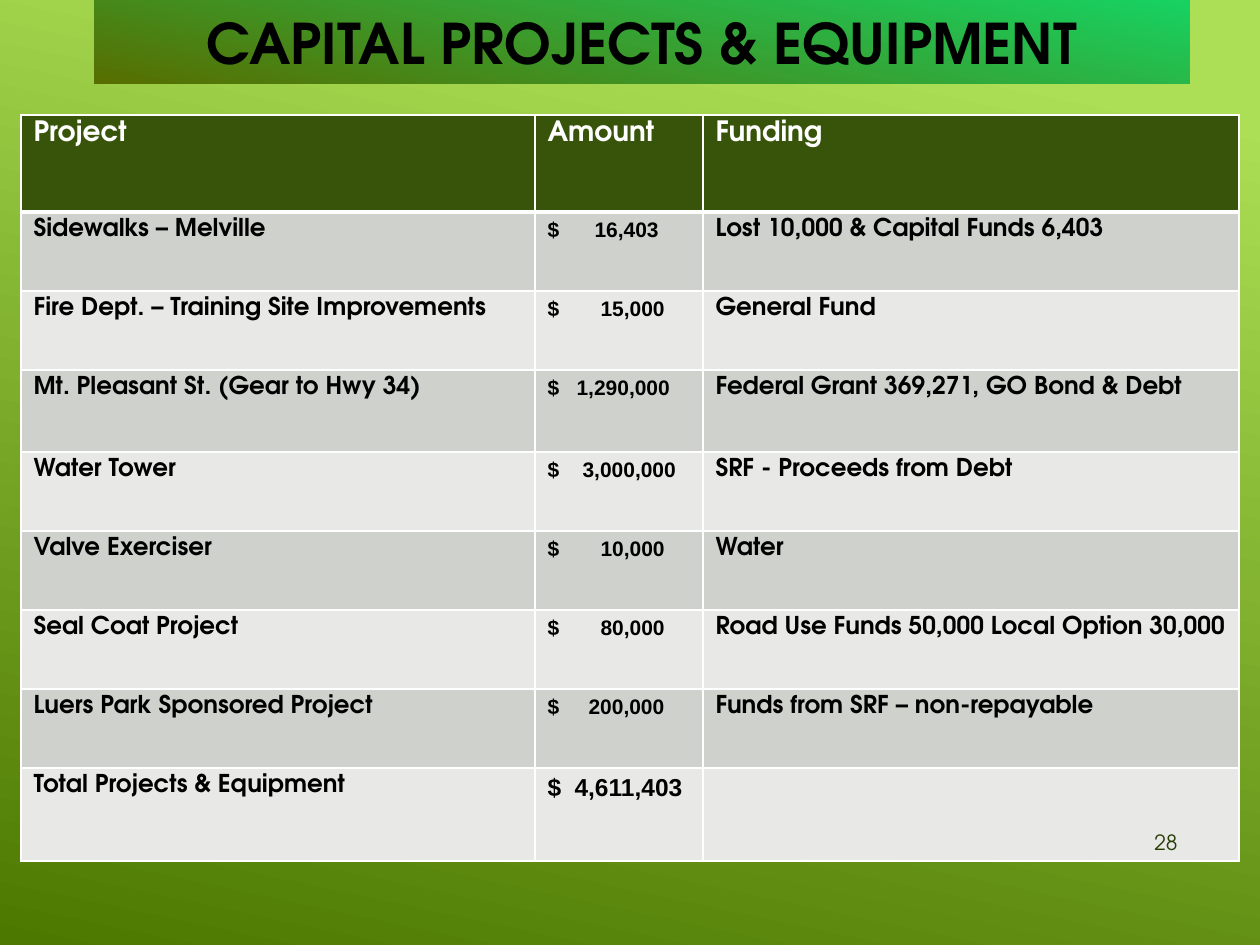
from lxml import etree
from pptx import Presentation
from pptx.dml.color import RGBColor
from pptx.enum.text import MSO_ANCHOR, PP_ALIGN
from pptx.oxml.ns import qn
from pptx.util import Emu, Pt

LEFT, MID, RIGHT, JUST = PP_ALIGN.LEFT, PP_ALIGN.CENTER, PP_ALIGN.RIGHT, PP_ALIGN.JUSTIFY
CENTRE, LOW = MSO_ANCHOR.MIDDLE, MSO_ANCHOR.BOTTOM

TITLE = "CAPITAL PROJECTS & EQUIPMENT"
PAGE = "28"
HEAD = ("Project", "Amount", "Funding")
ROWS = [
    ("Sidewalks – Melville", "16,403", "Lost 10,000 & Capital Funds 6,403"),
    ("Fire Dept. – Training Site Improvements", "15,000", "General Fund"),
    ("Mt. Pleasant St. (Gear to Hwy 34)", "1,290,000", "Federal Grant 369,271, GO Bond & Debt"),
    ("Water Tower", "3,000,000", "SRF - Proceeds from Debt"),
    ("Valve Exerciser", "10,000", "Water"),
    ("Seal Coat Project", "80,000", "Road Use Funds 50,000 Local Option 30,000"),
    ("Luers Park Sponsored Project", "200,000", "Funds from SRF – non-repayable"),
    ("Total Projects & Equipment", "4,611,403", ""),
]
TABS = (47, 53, 29, 35, 53, 53, 41, 27)
WIDTHS = (514, 168, 536)
HEIGHTS = (97, 79, 79, 82, 79, 79, 79, 79, 93)

THEME = {
    "font": "TeX Gyre Adventor", "digits": "Arial",
    "back": ((0.1, "ACDF55"), (1, "4C7800")),
    "band": ((0, "17D262"), (1, "576E00")),
    "head": "38540A", "odd": "CED1CC", "even": "E8E9E7",
    "ink": "000000", "light": "FFFFFF", "page": "293E06",
    "title_pt": 32, "head_pt": 16, "body_pt": 14, "small_pt": 12,
}
SLOPE = 102


def px(n):
    return Emu(round(n * 914400 / 126))


def rgb(name):
    return RGBColor.from_string(THEME[name])


def blend(fill, name):
    fill.gradient()
    fill.gradient_angle = 360 - SLOPE
    for stop, (at, tone) in zip(fill.gradient_stops, THEME[name]):
        stop.position = at
        stop.color.rgb = RGBColor.from_string(tone)


def write(frame, text, size="body_pt", tone="ink", font="font", bold=True,
          align=LEFT, tab=None):
    para = frame.paragraphs[0]
    para.alignment = align
    if tab:
        stops = etree.SubElement(para._p.get_or_add_pPr(), qn("a:tabLst"))
        etree.SubElement(stops, qn("a:tab"), pos=str(px(tab)), algn="l")
    run = para.add_run()
    run.text = text
    run.font.name = THEME[font]
    run.font.size = Pt(THEME[size])
    run.font.bold = bold
    run.font.color.rgb = rgb(tone)


def edge(cell, **widths):
    props = cell._tc.get_or_add_tcPr()
    for side in "LRTB":
        line = etree.SubElement(props, qn(f"a:ln{side}"), w=str(Pt(widths.get(side, 1))))
        paint = etree.SubElement(line, qn("a:solidFill"))
        etree.SubElement(paint, qn("a:srgbClr"), val=THEME["light"])


def shade(cell, tone):
    cell.fill.solid()
    cell.fill.fore_color.rgb = rgb(tone)


def build():
    deck = Presentation()
    deck.slide_width, deck.slide_height = px(1260), px(945)
    slide = deck.slides.add_slide(deck.slide_layouts[5])
    blend(slide.background.fill, "back")

    title = slide.shapes.title
    title.left, title.top, title.width, title.height = map(px, (94, 0, 1096, 84))
    blend(title.fill, "band")
    title.text_frame.vertical_anchor = CENTRE
    write(title.text_frame, TITLE, size="title_pt", align=MID)

    grid = slide.shapes.add_table(
        len(HEIGHTS), len(WIDTHS), px(21), px(115), px(sum(WIDTHS)), px(sum(HEIGHTS))
    ).table
    for col, wide in zip(grid.columns, WIDTHS):
        col.width = px(wide)
    for row, high in zip(grid.rows, HEIGHTS):
        row.height = px(high)

    for c, text in enumerate(HEAD):
        cell = grid.cell(0, c)
        edge(cell, B=3)
        shade(cell, "head")
        write(cell.text_frame, text, size="head_pt", tone="light",
              align=JUST if c == 1 else LEFT)

    for r, (row, tab) in enumerate(zip(ROWS, TABS), 1):
        for c, text in enumerate(row):
            cell = grid.cell(r, c)
            edge(cell, T=3 if r == 1 else 1)
            shade(cell, "odd" if r % 2 else "even")
            if c == 1:
                size = "body_pt" if r == len(ROWS) else "small_pt"
                write(cell.text_frame, f"$\t{text}", size=size, font="digits",
                      align=JUST, tab=tab)
            elif text:
                write(cell.text_frame, text)

    page = slide.shapes.add_textbox(*map(px, (1071, 769, 119, 92))).text_frame
    page.word_wrap = True
    page.vertical_anchor = LOW
    write(page, PAGE, size="small_pt", tone="page", bold=False, align=RIGHT)
    deck.save("out.pptx")


if __name__ == "__main__":
    build()
